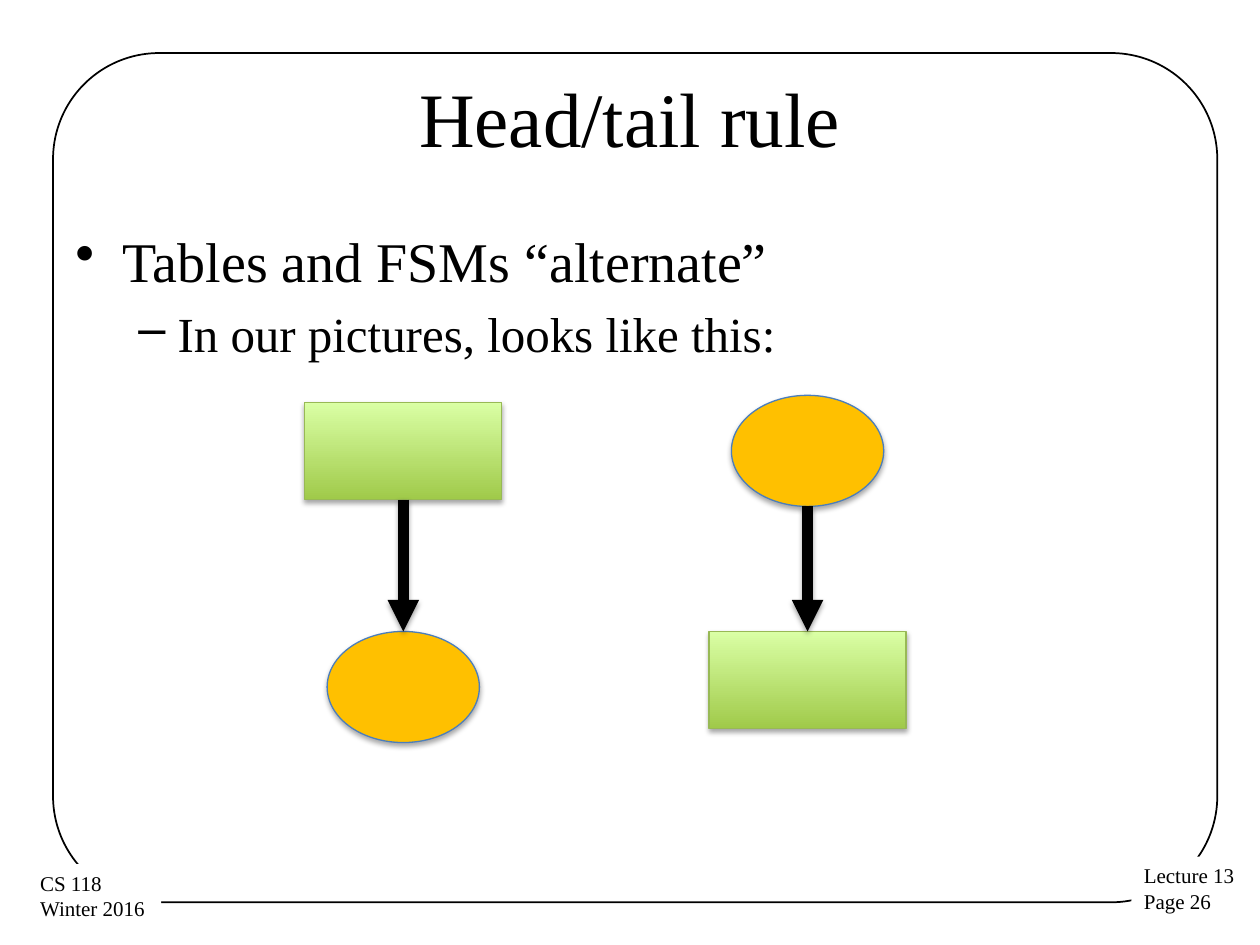
from dataclasses import dataclass

from lxml.etree import SubElement
from pptx import Presentation
from pptx.dml.color import RGBColor
from pptx.enum.shapes import MSO_CONNECTOR as Connector, MSO_SHAPE as Shape
from pptx.enum.text import MSO_ANCHOR as Anchor, MSO_AUTO_SIZE as AutoSize, PP_ALIGN as Align
from pptx.oxml.ns import qn
from pptx.util import Cm, Pt


@dataclass(frozen=True)
class Theme:
    font: str = "Times New Roman"
    ink: str = "000000"
    paper: str = "FFFFFF"
    table_low: str = "A0CA4A"
    table_high: str = "DAFFA5"
    table_edge: str = "98B955"
    state_fill: str = "FFC000"
    state_edge: str = "4B7EBC"
    title_size: int = 44
    level_sizes: tuple = (32, 28)
    corner_size: int = 12


def rgb(value):
    return RGBColor.from_string(value)


def add_shadow(shape, distance, opacity):
    """Cast a soft black shadow straight down; distance is in points, opacity in percent."""
    effects = SubElement(shape._element.spPr, qn("a:effectLst"))
    shadow = SubElement(effects, qn("a:outerShdw"), blurRad=str(Pt(3.1)),
                        dist=str(Pt(distance)), dir="5400000", rotWithShape="0")
    black = SubElement(shadow, qn("a:srgbClr"), val="000000")
    SubElement(black, qn("a:alpha"), val=str(opacity * 1000))


class SlideBuilder:
    TABLE_SIZE = (3.97, 1.96)
    STATE_SIZE = (3.07, 2.24)
    BULLETS = (("•", 0.95, -0.95), ("–", 2.06, -0.79))  # mark, margin, indent

    def __init__(self, slide, theme):
        self.slide = slide
        self.theme = theme

    def style(self, paragraph, size):
        font = paragraph.font
        font.name, font.size = self.theme.font, Pt(size)
        font.color.rgb = rgb(self.theme.ink)

    def frame(self, left, top, width, height):
        border = self.slide.shapes.add_shape(
            Shape.ROUNDED_RECTANGLE, Cm(left), Cm(top), Cm(width), Cm(height))
        border.adjustments[0] = 0.125
        border.fill.background()
        border.line.color.rgb = rgb(self.theme.ink)
        border.line.width = Pt(1)
        border.shadow.inherit = False

    def title(self, wording, left, top, width, height):
        title = self.slide.shapes.title
        title.left, title.top, title.width, title.height = map(Cm, (left, top, width, height))
        title.text_frame.text = wording
        title.text_frame.vertical_anchor = Anchor.MIDDLE
        heading = title.text_frame.paragraphs[0]
        heading.alignment = Align.CENTER
        self.style(heading, self.theme.title_size)

    def corner_note(self, wording, left, top, width, height):
        note = self.slide.shapes.add_textbox(Cm(left), Cm(top), Cm(width), Cm(height))
        note.fill.solid()
        note.fill.fore_color.rgb = rgb(self.theme.paper)
        note.text_frame.text = wording
        note.text_frame.word_wrap = False
        note.text_frame.auto_size = AutoSize.SHAPE_TO_FIT_TEXT
        for paragraph in note.text_frame.paragraphs:
            self.style(paragraph, self.theme.corner_size)

    def outline(self, points, left, top, width, height):
        """Write (level, wording) points as a bulleted list."""
        body = self.slide.shapes.add_textbox(Cm(left), Cm(top), Cm(width), Cm(height)).text_frame
        body.word_wrap = True
        body.text = "\n".join(wording for _, wording in points)
        for paragraph, (level, _) in zip(body.paragraphs, points):
            size = self.theme.level_sizes[level]
            mark, margin, indent = self.BULLETS[level]
            self.style(paragraph, size)
            paragraph.level = level
            paragraph.space_before = Pt(0.2 * size)
            properties = paragraph._p.get_or_add_pPr()
            properties.set("marL", str(Cm(margin)))
            properties.set("indent", str(Cm(indent)))
            bullet = properties.makeelement(qn("a:buChar"), {"char": mark})
            properties.find(qn("a:defRPr")).addprevious(bullet)

    def node(self, kind, size, edge, center, top):
        width, height = size
        node = self.slide.shapes.add_shape(
            kind, Cm(center - width / 2), Cm(top), Cm(width), Cm(height))
        node.line.color.rgb = rgb(edge)
        node.line.width = Pt(0.75)
        add_shadow(node, 1.8, 35)
        return node

    def table_node(self, center, top):
        table = self.node(Shape.RECTANGLE, self.TABLE_SIZE, self.theme.table_edge, center, top)
        table.fill.gradient()
        table.fill.gradient_angle = 90
        shades = (self.theme.table_low, self.theme.table_high)
        for stop, shade in zip(table.fill.gradient_stops, shades):
            stop.color.rgb = rgb(shade)
        return table

    def state_node(self, center, top):
        state = self.node(Shape.OVAL, self.STATE_SIZE, self.theme.state_edge, center, top)
        state.fill.solid()
        state.fill.fore_color.rgb = rgb(self.theme.state_fill)
        return state

    def arrow(self, upper, lower):
        """Point from the bottom of the upper node to the top of the lower one."""
        center = upper.left + upper.width // 2
        arrow = self.slide.shapes.add_connector(
            Connector.STRAIGHT, center, upper.top + upper.height, center, lower.top)
        if upper.auto_shape_type == Shape.RECTANGLE:
            arrow.begin_connect(upper, 2)
        arrow.end_connect(lower, 0)
        arrow.line.color.rgb = rgb(self.theme.ink)
        arrow.line.width = Pt(6)
        SubElement(arrow.line._get_or_add_ln(), qn("a:tailEnd"), type="triangle")
        add_shadow(arrow, 1.6, 38)


def main():
    deck = Presentation()
    deck.slide_width, deck.slide_height = Cm(25.4), Cm(19.05)
    title_only = deck.slide_layouts[5]
    page = SlideBuilder(deck.slides.add_slide(title_only), Theme())

    page.frame(1.07, 1.07, 23.47, 17.12)
    page.corner_note("Lecture 13\nPage 26", 22.81, 17.27, 2.36, 1.3)
    page.corner_note("CS 118\nWinter 2016", 0.56, 17.42, 2.69, 1.3)
    page.title("Head/tail rule", 1.27, 0.76, 22.86, 3.18)
    page.outline([(0, "Tables and FSMs “alternate”"),
                  (1, "In our pictures, looks like this:")], 1.27, 4.45, 22.86, 12.57)

    upper_middle, lower_top = 9.09, 12.73
    table_top = upper_middle - page.TABLE_SIZE[1] / 2
    state_top = upper_middle - page.STATE_SIZE[1] / 2
    left_column, right_column = 8.13, 16.28
    page.arrow(page.table_node(left_column, table_top), page.state_node(left_column, lower_top))
    page.arrow(page.state_node(right_column, state_top), page.table_node(right_column, lower_top))

    deck.save("out.pptx")


if __name__ == "__main__":
    main()
